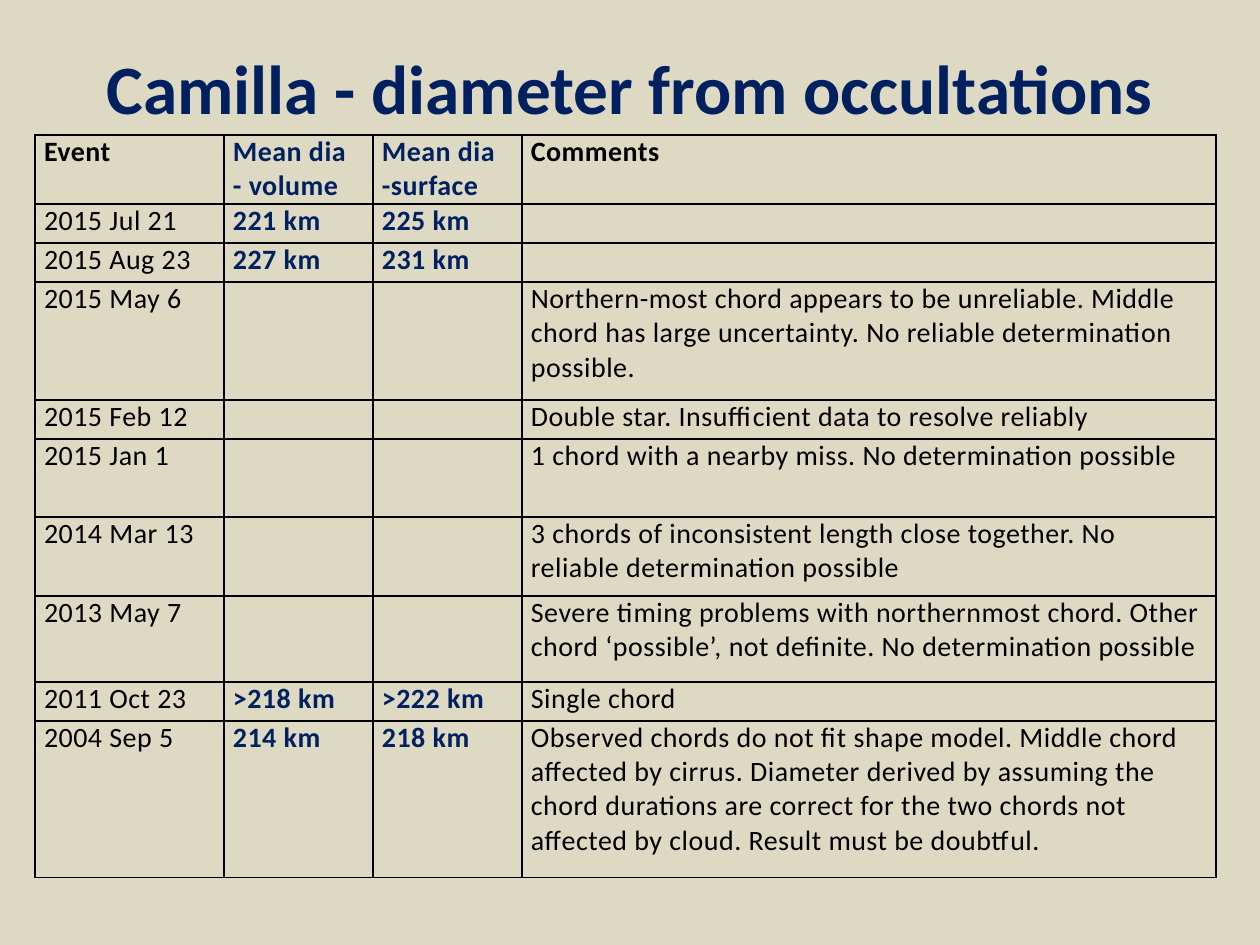
"""Build a slide with a table of Camilla's diameters from occultations."""
from lxml import etree
from pptx import Presentation
from pptx import util as u
from pptx.dml.color import RGBColor
from pptx.enum import text
from pptx.oxml.ns import qn

PX = 914400 // 126
FONT = "Calibri"
COLORS = {"paper": "DDD9C3", "navy": "002060", "black": "000000"}
TITLE = "Camilla - diameter from occultations"
HEADER = ("Event", "Mean dia\n- volume", "Mean dia\n-surface", "Comments")
EVENTS = [
    ("2015 Jul 21", "221 km", "225 km", ""),
    ("2015 Aug 23", "227 km", "231 km", ""),
    ("2015 May 6", "", "", "Northern-most chord appears to be unreliable. Middle chord has "
     "large uncertainty. No reliable determination possible."),
    ("2015 Feb 12", "", "", "Double star. Insufficient data to resolve reliably"),
    ("2015 Jan 1", "", "", "1 chord with a nearby miss. No determination possible"),
    ("2014 Mar 13", "", "", "3 chords of inconsistent length close together. "
     "No reliable determination possible"),
    ("2013 May 7", "", "", "Severe timing problems with northernmost chord. Other chord "
     "‘possible’, not definite. No determination possible"),
    ("2011 Oct 23", ">218 km", ">222 km", "Single chord"),
    ("2004 Sep 5", "214 km", "218 km", "Observed chords do not fit shape model. Middle chord "
     "affected by cirrus. Diameter derived by assuming the chord durations are correct for "
     "the two chords not affected by cloud. Result must be doubtful."),
]
COLUMN_WIDTHS = (189, 149, 149, 694)
ROW_HEIGHTS = (69, 39, 39, 118, 39, 78, 79, 86, 39, 157)
DIAMETER_COLUMNS = (1, 2)


def px(length):
    return u.Emu(length * PX)


def add_span(para, words, size, color, bold):
    span = para.add_run()
    span.text = words
    span.font.name = FONT
    span.font.size = u.Pt(size)
    span.font.bold = bold
    span.font.color.rgb = RGBColor.from_string(COLORS[color])
    return span


def add_borders(cell):
    properties = cell._tc.get_or_add_tcPr()
    for position, side in enumerate(("lnL", "lnR", "lnT", "lnB")):
        line = etree.Element(qn(f"a:{side}"), w=str(u.Pt(1)))
        fill = etree.SubElement(line, qn("a:solidFill"))
        etree.SubElement(fill, qn("a:srgbClr"), val=COLORS["black"])
        properties.insert(position, line)


def fill_cell(cell, words, color, bold):
    cell.margin_left = cell.margin_right = px(9)
    cell.margin_top = cell.margin_bottom = 0
    cell.fill.background()
    add_borders(cell)
    if not words:
        return
    frame = cell.text_frame
    for index, line in enumerate(words.split("\n")):
        para = frame.add_paragraph() if index else frame.paragraphs[0]
        span = add_span(para, line, 16, color, bold)
        span.font._element.set("spc", "30")


def add_title(page):
    title = page.shapes.title
    title.left, title.top, title.width, title.height = map(px, (63, 38, 1134, 97))
    frame = title.text_frame
    frame.word_wrap = True
    frame.auto_size = text.MSO_AUTO_SIZE.NONE
    frame.vertical_anchor = text.MSO_ANCHOR.MIDDLE
    para = frame.paragraphs[0]
    para.alignment = text.PP_ALIGN.CENTER
    add_span(para, TITLE, 39.6, "navy", True)


def add_event_table(page):
    rows = [HEADER, *EVENTS]
    table = page.shapes.add_table(
        len(rows), len(HEADER), px(35), px(135),
        px(sum(COLUMN_WIDTHS)), px(sum(ROW_HEIGHTS))).table
    table.first_row = table.horz_banding = False
    for column, width in zip(table.columns, COLUMN_WIDTHS):
        column.width = px(width)
    for r, (values, height) in enumerate(zip(rows, ROW_HEIGHTS)):
        table.rows[r].height = px(height)
        for c, words in enumerate(values):
            is_diameter = c in DIAMETER_COLUMNS
            color = "navy" if is_diameter else "black"
            fill_cell(table.cell(r, c), words, color, r == 0 or is_diameter)


def main():
    deck = Presentation()
    deck.slide_width, deck.slide_height = px(1260), px(945)
    page = deck.slides.add_slide(deck.slide_layouts[5])
    page.background.fill.solid()
    page.background.fill.fore_color.rgb = RGBColor.from_string(COLORS["paper"])
    add_title(page)
    add_event_table(page)
    deck.save("out.pptx")


if __name__ == "__main__":
    main()
